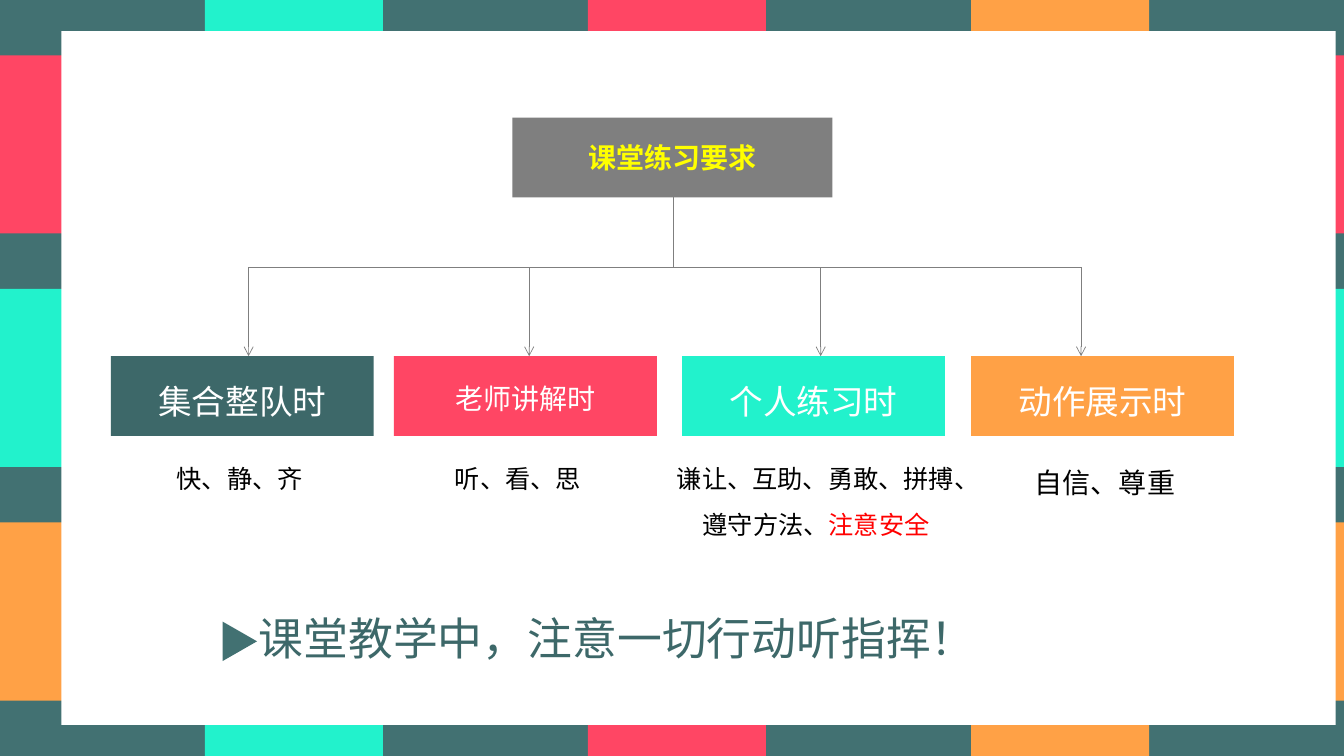
"""Build a slide showing the classroom practice requirements as a tree of four situations."""
from lxml import etree
from pptx import Presentation
from pptx.dml.color import RGBColor
from pptx.enum.shapes import MSO_CONNECTOR, MSO_SHAPE
from pptx.enum.text import MSO_ANCHOR, PP_ALIGN
from pptx.oxml.ns import qn
from pptx.util import Inches, Pt

THEME = {
    "frame": "427172", "slate": "3D6869", "red": "FF4664", "mint": "22F2CC",
    "orange": "FFA146", "grey": "7F7F7F", "white": "FFFFFF", "black": "000000",
    "yellow": "FFFF00", "warning": "FF0000",
    "latin": "Arial", "chinese": "Noto Sans CJK SC",
    "caption": 18, "heading": 20, "label": 24, "statement": 32, "line": 0.5,
}

presentation = Presentation()
presentation.slide_width, presentation.slide_height = Inches(13.33), Inches(7.5)
slide = presentation.slides.add_slide(presentation.slide_layouts[6])
COLUMN = presentation.slide_width / 160
ROW = presentation.slide_height / 90


def add_block(left, top, width, height, color, preset=MSO_SHAPE.RECTANGLE):
    """Add a plain filled shape measured in grid columns and rows."""
    shape = slide.shapes.add_shape(preset, int(left * COLUMN), int(top * ROW),
                                   int(width * COLUMN), int(height * ROW))
    shape.shadow.inherit = False
    shape.fill.solid()
    shape.fill.fore_color.rgb = RGBColor.from_string(THEME[color])
    shape.line.fill.background()
    return shape


def add_run(paragraph, text, size, color, font="chinese", bold=False):
    """Add a run with its Latin and East Asian fonts, size and colour."""
    run = paragraph.add_run()
    run.text = text
    run.font.size = Pt(THEME[size])
    run.font.bold = bold
    run.font.color.rgb = RGBColor.from_string(THEME[color])
    run.font.name = THEME[font]
    east_asian = etree.SubElement(run.font._element, qn("a:ea"))
    east_asian.set("typeface", THEME["chinese"])


add_block(0, 0, 160, 90, "frame")
BAND = 21.2
for index, color in enumerate(["red", "mint", "orange"]):
    add_block(0, 6.6 + index * 27.8, 160, BAND, color)
for index, color in enumerate(["mint", "red", "orange"]):
    add_block(24.4 + index * 45.6, 0, BAND, 90, color)
add_block(7.3, 3.7, 151.7, 82.6, "white")

ROOT_BOTTOM, BRANCH, BOX_TOP = 23.4, 31.8, 42.4
BOX_WIDTH, BOX_HEIGHT, CAPTION_TOP = 31.3, 9.5, 52.8
TRUNK = 80.2
situations = [
    {"text": "集合整队时", "size": "label", "color": "slate", "box": 13.2, "arrow": 29.6,
     "caption": (12, 33.1, 6.6), "caption_size": "caption",
     "lines": [(PP_ALIGN.CENTER, [("快、静、齐", "black")])]},
    {"text": "老师讲解时", "size": "heading", "color": "red", "box": 46.9, "arrow": 63,
     "caption": (45.1, 33.1, 6.6), "caption_size": "caption",
     "lines": [(PP_ALIGN.CENTER, [("听、看、思", "black")])]},
    {"text": "个人练习时", "size": "label", "color": "mint", "box": 81.2, "arrow": 97.7,
     "caption": (79.4, 35.5, 17.5), "caption_size": "caption",
     "lines": [(PP_ALIGN.LEFT, [("谦让、互助、勇敢、拼搏、", "black")]),
               (PP_ALIGN.CENTER, [("遵守方法、", "black"), ("注意安全", "warning")])]},
    {"text": "动作展示时", "size": "label", "color": "orange", "box": 115.6, "arrow": 128.7,
     "caption": (115, 33.1, 13.3), "caption_size": "heading",
     "lines": [(PP_ALIGN.CENTER, [("自信、尊重", "black")])]},
]

arrows = [item["arrow"] for item in situations]
lines = [(arrows[0], BRANCH, arrows[-1], BRANCH, False),
         (TRUNK, ROOT_BOTTOM, TRUNK, BRANCH, False)]
lines += [(arrow, BRANCH, arrow, BOX_TOP, True) for arrow in arrows]
for start_x, start_y, end_x, end_y, has_head in lines:
    connector = slide.shapes.add_connector(
        MSO_CONNECTOR.STRAIGHT, int(start_x * COLUMN), int(start_y * ROW),
        int(end_x * COLUMN), int(end_y * ROW))
    connector.line.color.rgb = RGBColor.from_string(THEME["grey"])
    connector.line.width = Pt(THEME["line"])
    if has_head:
        etree.SubElement(connector.line._get_or_add_ln(), qn("a:tailEnd")).set("type", "arrow")
    etree.SubElement(connector._element.spPr, qn("a:effectLst"))

root = add_block(61, 14, 38.1, BOX_HEIGHT, "grey")
root.text_frame.vertical_anchor = MSO_ANCHOR.MIDDLE
root.text_frame.paragraphs[0].alignment = PP_ALIGN.CENTER
add_run(root.text_frame.paragraphs[0], "课堂练习要求", "heading", "yellow", bold=True)

for item in situations:
    box = add_block(item["box"], BOX_TOP, BOX_WIDTH, BOX_HEIGHT, item["color"])
    box.text_frame.vertical_anchor = MSO_ANCHOR.TOP
    box.text_frame.margin_top = int(3 * ROW)
    box.text_frame.paragraphs[0].alignment = PP_ALIGN.CENTER
    add_run(box.text_frame.paragraphs[0], item["text"], item["size"], "white")

    left, width, height = item["caption"]
    caption = slide.shapes.add_textbox(int(left * COLUMN), int(CAPTION_TOP * ROW),
                                       int(width * COLUMN), int(height * ROW))
    caption.text_frame.word_wrap = True
    for index, (alignment, runs) in enumerate(item["lines"]):
        frame = caption.text_frame
        paragraph = frame.add_paragraph() if index else frame.paragraphs[0]
        paragraph.alignment = alignment
        paragraph.line_spacing = 1.5
        for text, color in runs:
            add_run(paragraph, text, item["caption_size"], color, "latin")

marker = add_block(26.2, 74.3, 4.7, 4.1, "frame", MSO_SHAPE.ISOSCELES_TRIANGLE)
marker.rotation = 90
statement = slide.shapes.add_textbox(int(29.6 * COLUMN), int(68.9 * ROW),
                                     int(107.2 * COLUMN), int(10.9 * ROW))
statement.text_frame.word_wrap = True
statement.text_frame.paragraphs[0].line_spacing = 1.5
add_run(statement.text_frame.paragraphs[0], "课堂教学中，注意一切行动听指挥！", "statement", "slate")

presentation.save("out.pptx")
